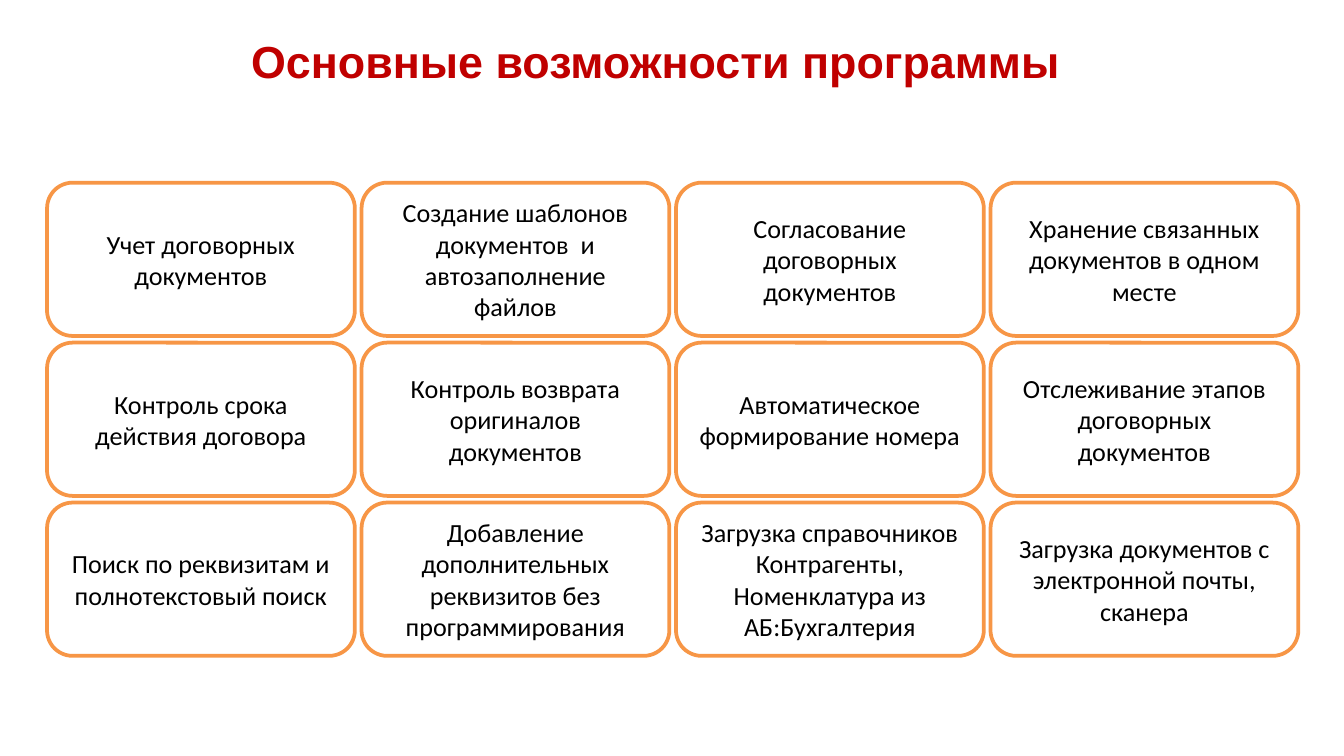
import pptx
import pptx.util
import pptx.dml.color
import pptx.enum.shapes
import pptx.enum.text

Inches = pptx.util.Inches
COLORS = {"title": "C00000", "text": "000000", "card": "FFFFFF", "border": "F79646"}

# Card grid, in inches
LEFT, TOP = 0.35, 1.36
CARD_WIDTH, CARD_HEIGHT = 2.29, 1.14
COLUMN_STEP, ROW_STEP = 2.34, 1.19

FEATURES = [
    ["Учет договорных документов",
     "Создание шаблонов документов  и автозаполнение файлов",
     "Согласование договорных документов",
     "Хранение связанных документов в одном месте"],
    ["Контроль срока действия договора",
     "Контроль возврата оригиналов документов",
     "Автоматическое формирование номера",
     "Отслеживание этапов договорных документов"],
    ["Поиск по реквизитам и полнотекстовый поиск",
     "Добавление дополнительных реквизитов без программирования",
     "Загрузка справочников Контрагенты, Номенклатура из АБ:Бухгалтерия",
     "Загрузка документов с электронной почты, сканера"],
]


def color(name):
    return pptx.dml.color.RGBColor.from_string(COLORS[name])


def write_text(shape, text, font="Calibri", size=14, bold=False, color_name="text",
               align=pptx.enum.text.PP_ALIGN.CENTER):
    frame = shape.text_frame
    frame.word_wrap = True
    frame.vertical_anchor = pptx.enum.text.MSO_ANCHOR.MIDDLE
    paragraph = frame.paragraphs[0]
    paragraph.alignment = align
    run = paragraph.add_run()
    run.text = text
    run.font.name = font
    run.font.size = pptx.util.Pt(size)
    run.font.bold = bold
    run.font.color.rgb = color(color_name)


# Widescreen slide, 16:9
presentation = pptx.Presentation()
presentation.slide_width = Inches(10)
presentation.slide_height = presentation.slide_width * 9 // 16
slide = presentation.slides.add_slide(presentation.slide_layouts[6])

# Title
title = slide.shapes.add_textbox(Inches(1.77), Inches(0.13), Inches(7.72), Inches(0.64))
write_text(title, "Основные возможности программы", font="Arial", size=24, bold=True,
           color_name="title", align=pptx.enum.text.PP_ALIGN.LEFT)

# Feature cards
for row, features in enumerate(FEATURES):
    for column, feature in enumerate(features):
        card = slide.shapes.add_shape(
            pptx.enum.shapes.MSO_SHAPE.ROUNDED_RECTANGLE,
            Inches(LEFT + column * COLUMN_STEP), Inches(TOP + row * ROW_STEP),
            Inches(CARD_WIDTH), Inches(CARD_HEIGHT))
        card.shadow.inherit = False
        card.fill.solid()
        card.fill.fore_color.rgb = color("card")
        card.line.color.rgb = color("border")
        card.line.width = pptx.util.Pt(2)
        write_text(card, feature)

presentation.save("out.pptx")
